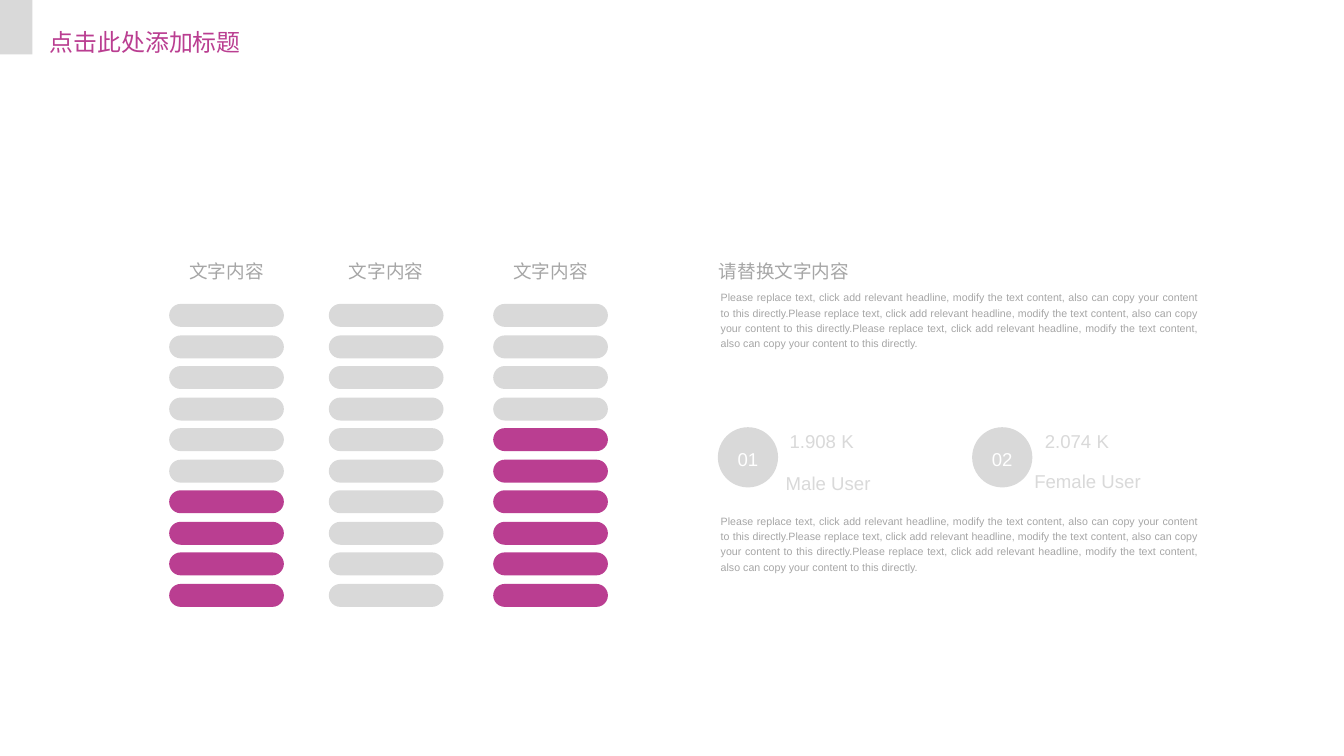
from pptx import Presentation
from pptx.dml.color import RGBColor
from pptx.enum.shapes import MSO_SHAPE as Shape
from pptx.enum.text import MSO_ANCHOR as Anchor, MSO_AUTO_SIZE as AutoSize, PP_ALIGN as Align
from pptx.util import Pt

PX = 9144  # EMU per px, at 100 px to the inch
MAGENTA, SILVER, GREY, WHITE = "BA3E91", "D9D9D9", "A6A6A6", "FFFFFF"
BODY = " ".join([
    "Please replace text, click add relevant headline, modify the text content,",
    "also can copy your content to this directly."])

BAR_COUNT = 10
COLUMNS = [(177, 4), (344, 0), (516, 6)]  # left edge, filled bars
USERS = [
    # number, circle left, labels as (text, x offset, y offset, width)
    ("01", 751, [("1.908 K", 75, -2, 72), ("Male User", 71, 42, 94)]),
    ("02", 1017, [("2.074 K", 76, -2, 72), ("Female User", 65, 40, 117)]),
]


def color(value):
    return RGBColor.from_string(value)


def emu(*lengths):
    return [length * PX for length in lengths]


def write(shape, text, size=14, fill=GREY, font="Arial", align=Align.JUSTIFY,
          spacing=1.2, before=None, margins=False, grow=True):
    frame = shape.text_frame
    frame.word_wrap = True
    frame.auto_size = AutoSize.SHAPE_TO_FIT_TEXT if grow else AutoSize.NONE
    if not margins:
        frame.margin_left = frame.margin_top = frame.margin_right = frame.margin_bottom = 0
    paragraph = frame.paragraphs[0]
    paragraph.alignment = align
    paragraph.line_spacing = spacing
    if before is not None:
        paragraph.space_before = Pt(before)
    run = paragraph.add_run()
    run.text = text
    run.font.size = Pt(size)
    run.font.name = font
    run.font.color.rgb = color(fill)


def add_text(slide, box, text, **text_format):
    write(slide.shapes.add_textbox(*emu(*box)), text, **text_format)


def add_block(slide, kind, box, fill):
    shape = slide.shapes.add_shape(kind, *emu(*box))
    shape.shadow.inherit = False
    shape.fill.solid()
    shape.fill.fore_color.rgb = color(fill)
    shape.line.fill.background()
    return shape


def add_header(slide, left, top):
    add_block(slide, Shape.RECTANGLE, (left, top, 34, 57), SILVER)
    add_text(slide, (left + 42, top + 24, 236, 39), "点击此处添加标题", size=18,
             fill=MAGENTA, font="Noto Sans CJK SC", align=Align.LEFT,
             spacing=None, before=10.6, margins=True, grow=False)


def add_bar_column(slide, left, top, filled):
    add_text(slide, (left + 6, top, 108, 24), "文字内容",
             align=Align.CENTER, spacing=None)
    # Bars fill from the bottom up
    for row in range(BAR_COUNT):
        bar_top = top + 46 + round(row * 293 / (BAR_COUNT - 1))
        fill = MAGENTA if row >= BAR_COUNT - filled else SILVER
        bar = add_block(slide, Shape.ROUNDED_RECTANGLE, (left, bar_top, 120, 24), fill)
        bar.adjustments[0] = 0.5


def add_user(slide, left, top, number, labels):
    circle = add_block(slide, Shape.OVAL, (left, top, 63, 63), SILVER)
    circle.text_frame.vertical_anchor = Anchor.MIDDLE
    write(circle, number, fill=WHITE, align=Align.CENTER, grow=False)
    for text, x, y, width in labels:
        add_text(slide, (left + x, top + y, width, 26), text, fill=SILVER)


def add_description(slide, left, top):
    add_text(slide, (left, top, 448, 26), "请替换文字内容")
    # The same paragraph stands above and below the users
    for offset in (35, 269):
        add_text(slide, (left + 2, top + offset, 500, 65), BODY * 3, size=8)
    for number, user_left, labels in USERS:
        add_user(slide, user_left, top + 180, number, labels)


def main():
    presentation = Presentation()
    presentation.slide_width, presentation.slide_height = emu(1406, 791)
    slide = presentation.slides.add_slide(presentation.slide_layouts[6])
    add_header(slide, 0, 0)
    for left, filled in COLUMNS:
        add_bar_column(slide, left, 272, filled)
    add_description(slide, 752, 267)
    presentation.save("out.pptx")


if __name__ == "__main__":
    main()
